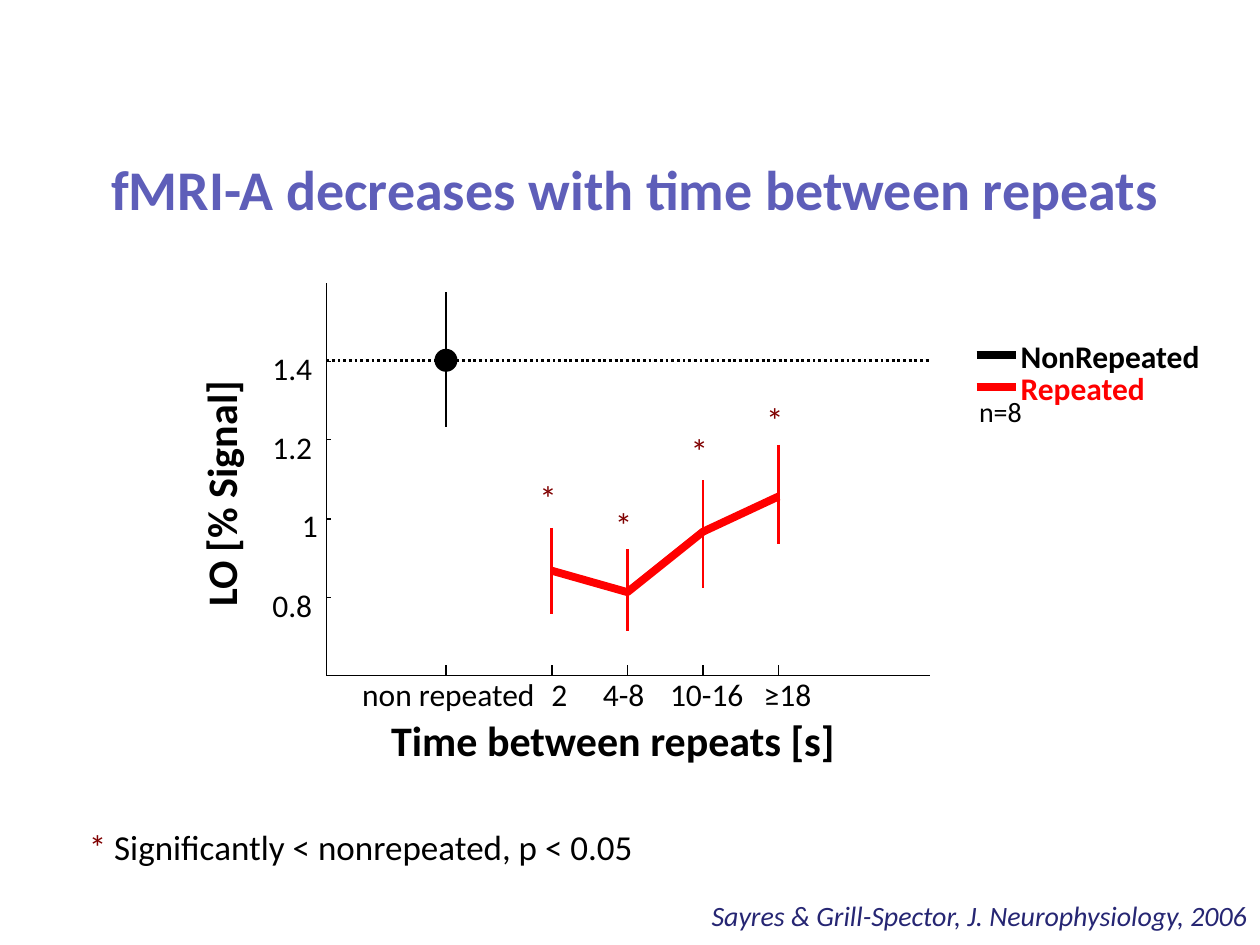
from lxml import etree
from pptx import Presentation
from pptx import util as u
from pptx.dml.color import RGBColor
from pptx.enum import dml, shapes, text
from pptx.oxml import ns

BLACK = RGBColor(0, 0, 0)
RED = RGBColor(255, 0, 0)
MAROON = RGBColor(128, 0, 0)
VIOLET = RGBColor(0x5E, 0x5E, 0xB9)
NAVY = RGBColor(0x26, 0x26, 0x73)
LEFT, MID, RIGHT = text.PP_ALIGN.LEFT, text.PP_ALIGN.CENTER, text.PP_ALIGN.RIGHT
SCALE = 9144


def px(*nums):
    return [u.Emu(n * SCALE) for n in nums]


def write(frame, *words, size=18, color=BLACK, bold=False, italic=False,
          align=MID, gap=None, tints=()):
    frame.margin_left = frame.margin_right = 0
    frame.margin_top = frame.margin_bottom = 0
    frame.word_wrap = False
    frame.auto_size = text.MSO_AUTO_SIZE.NONE
    frame.vertical_anchor = text.MSO_ANCHOR.MIDDLE
    para = frame.paragraphs[0]
    para.alignment = align
    para.line_spacing = gap
    for spot, word in enumerate(words):
        run = para.add_run()
        run.text = word
        font = run.font
        font.name = "Calibri"
        font.size = u.Pt(size)
        font.bold, font.italic = bold, italic
        font.color.rgb = tints[spot] if tints else color


class Pen:
    def __init__(self, deck, font="Calibri"):
        self.slide = deck.slides.add_slide(deck.slide_layouts[5])
        self.shapes = self.slide.shapes

    def title(self, word, box, **style):
        head = self.shapes.title
        head.left, head.top, head.width, head.height = px(*box)
        write(head.text_frame, word, **style)

    def label(self, box, *words, turn=0, **style):
        item = self.shapes.add_textbox(*px(*box))
        item.rotation = turn
        write(item.text_frame, *words, **style)

    def line(self, x1, y1, x2, y2, color=BLACK, width=0.75, dash=None):
        item = self.shapes.add_connector(
            shapes.MSO_CONNECTOR.STRAIGHT, *px(x1, y1, x2, y2))
        item.line.color.rgb = color
        item.line.width = u.Pt(width)
        if dash:
            item.line.dash_style = dash
        etree.SubElement(item._element.spPr, ns.qn("a:effectLst"))

    def dot(self, x, y, size, color=BLACK):
        half = size // 2
        item = self.shapes.add_shape(
            shapes.MSO_SHAPE.OVAL, *px(x - half, y - half, size, size))
        item.shadow.inherit = False
        item.fill.solid()
        item.fill.fore_color.rgb = color
        item.line.color.rgb = color
        item.line.width = u.Pt(1.62)

    def curve(self, points, color, width):
        path = self.shapes.build_freeform(*points[0], scale=SCALE)
        path.add_line_segments(points[1:], close=False)
        item = path.convert_to_shape()
        item.shadow.inherit = False
        item.fill.background()
        item.line.color.rgb = color
        item.line.width = u.Pt(width)


def main():
    deck = Presentation()
    deck.slide_width, deck.slide_height = px(1000, 750)
    pen = Pen(deck)
    pen.title("fMRI-A decreases with time between repeats",
              (4, 117, 1000, 64), size=32, color=VIOLET, bold=True)

    left, base, end = 259, 536, 738
    pen.line(left, 286, end, 286, width=1.62, dash=dml.MSO_LINE.ROUND_DOT)
    pen.line(left, base, end, base)
    pen.line(left, base, left, 225)

    ticks = [("non repeated", 354, 356), ("2", 438, 444), ("4-8", 498, 495),
             ("10-16", 558, 561), ("≥18", 618, 625)]
    for word, x, mid in ticks:
        pen.line(x, base, x, base - 8)
        pen.label((mid - 70, 538, 140, 29), word, gap=0.93)

    for row, word in enumerate(["1.4", "1.2", "1", "0.8"]):
        y = 287 + round(row * 62.3)
        pen.line(left, y, left + 4, y)
        mid = 246 if word == "1" else 232
        pen.label((mid - 17, 279 + round(row * 62.7), 34, 29), word, gap=0.93)

    pen.line(354, 232, 354, 339, width=1.62)
    pen.dot(354, 286, 16)

    data = [(438, 453, 419, 487, 381), (498, 470, 436, 501, 402),
            (558, 422, 381, 467, 343), (618, 394, 353, 432, 319)]
    for x, y, top, low, star in data:
        pen.line(x, top, x, low, RED, 1.62)
        pen.label((x - 10, star, 14, 32), "*", size=20, color=MAROON, gap=0.93)
    pen.curve([spot[:2] for spot in data], RED, 4.5)

    pen.label((308, 570, 357, 38), "Time between repeats [s]",
              size=24, bold=True, gap=0.93)
    pen.label((86, 373, 182, 38), "LO [% Signal]", turn=270,
              size=24, bold=True, gap=0.93)

    for word, y, color in [("NonRepeated", 282, BLACK), ("Repeated", 307, RED)]:
        pen.line(775, y, 806, y, color, 4.5)
        pen.label((810, y - 15, 147, 31), word, color=color, bold=True, align=LEFT)
    pen.label((777, 313, 38, 27), "n=8", size=16, align=LEFT)

    pen.label((68, 658, 437, 32), "*", " Significantly < nonrepeated, p < 0.05",
              size=20, tints=(MAROON, BLACK), gap=0.93)
    pen.label((477, 713, 513, 27),
              "Sayres & Grill-Spector, J. Neurophysiology, 2006",
              size=16, color=NAVY, italic=True, align=RIGHT)
    deck.save("out.pptx")


if __name__ == "__main__":
    main()
